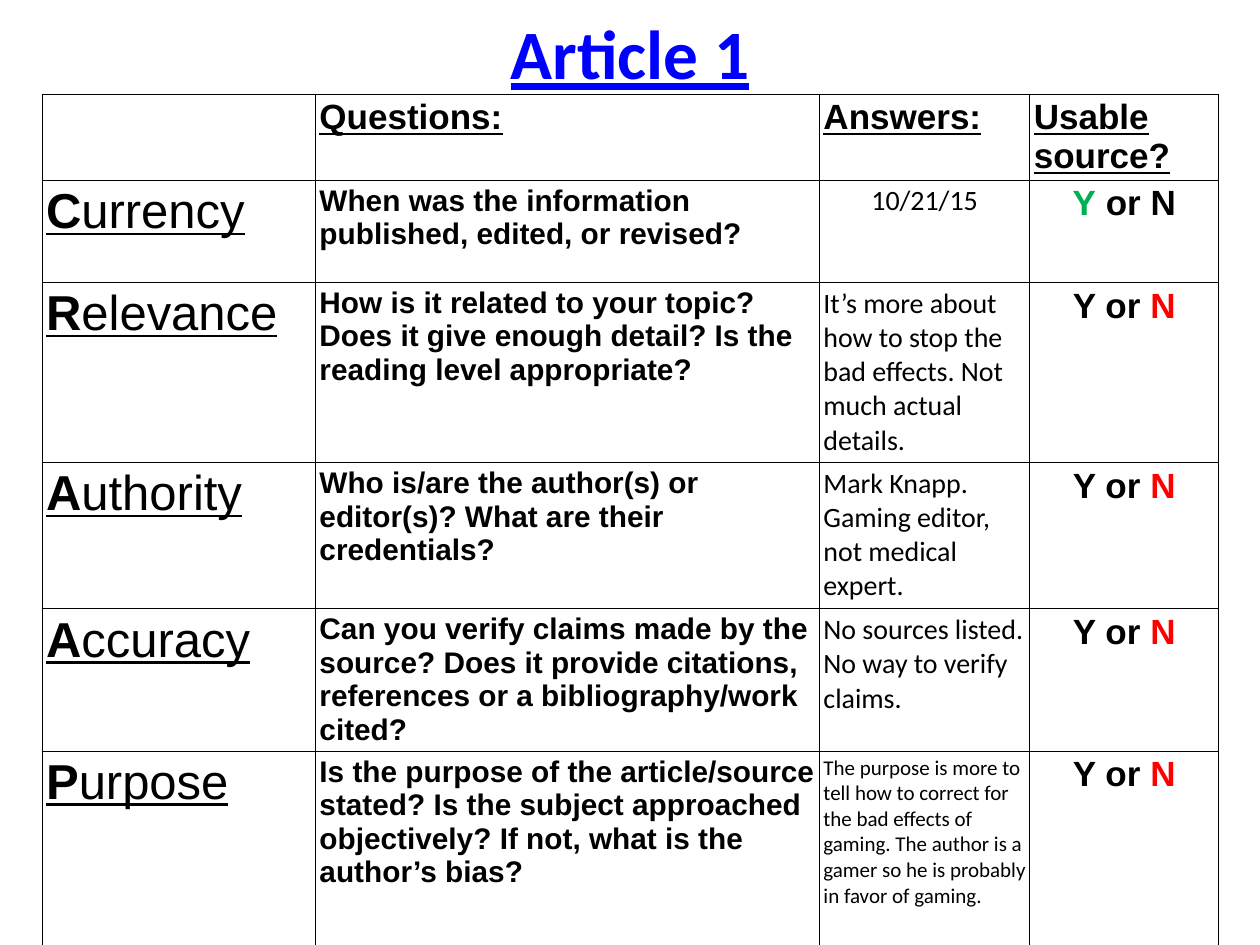
from lxml.etree import SubElement
from pptx import Presentation
from pptx.dml.color import RGBColor
from pptx.enum.text import MSO_ANCHOR, MSO_AUTO_SIZE, PP_ALIGN
from pptx.oxml.ns import qn
from pptx.util import Cm, Pt

COLORS = {"text": "000000", "title": "0000FF", "yes": "00B050", "no": "FF0000"}
COLUMN_WIDTHS = [5.51, 10.16, 4.24, 3.81]
ROW_HEIGHTS = [1.73, 2.06, 3.63, 2.95, 2.87, 5.05]
HEADERS = ["Questions:", "Answers:", "Usable source?"]

# Criterion, question, answer, answer size, answer alignment, usable
CRITERIA = [
    ("Currency", "When was the information published, edited, or revised?",
     "10/21/15", 16, PP_ALIGN.CENTER, True),
    ("Relevance", "How is it related to your topic? Does it give enough detail? "
     "Is the reading level appropriate?",
     "It’s more about how to stop the bad effects. Not much actual details.",
     16, PP_ALIGN.LEFT, False),
    ("Authority", "Who is/are the author(s) or editor(s)? What are their credentials?",
     "Mark Knapp. Gaming editor, not medical expert.", 16, PP_ALIGN.LEFT, False),
    ("Accuracy", "Can you verify claims made by the source? Does it provide citations, "
     "references or a bibliography/work cited?",
     "No sources listed. No way to verify claims.", 16, PP_ALIGN.LEFT, False),
    ("Purpose", "Is the purpose of the article/source stated? Is the subject approached "
     "objectively? If not, what is the author’s bias?",
     "The purpose is more to tell how to correct for the bad effects of gaming. "
     "The author is a gamer so he is probably in favor of gaming.",
     12, PP_ALIGN.LEFT, False),
]


class SlideBuilder:
    """Holds the style and the current slide."""

    heading_font = "Arial"
    body_font = "Calibri"
    cell_margin = Cm(0.08)
    border_width = Pt(0.75)

    def __init__(self, slide):
        self.slide = slide

    def style(self, font, name, size, color="text", bold=False, underline=False):
        font.name = name
        font.size = Pt(size)
        font.bold = bold
        font.underline = underline
        font.color.rgb = RGBColor.from_string(COLORS[color])

    def title(self, text, left, top, width, height):
        shape = self.slide.shapes.title
        shape.left, shape.top = Cm(left), Cm(top)
        shape.width, shape.height = Cm(width), Cm(height)
        frame = shape.text_frame
        frame.text = text
        frame.auto_size = MSO_AUTO_SIZE.NONE
        frame.vertical_anchor = MSO_ANCHOR.MIDDLE
        paragraph = frame.paragraphs[0]
        paragraph.alignment = PP_ALIGN.CENTER
        self.style(paragraph.font, self.body_font, 39.6, "title", True, True)

    def table(self, left, top, widths, heights):
        shape = self.slide.shapes.add_table(
            len(heights), len(widths), Cm(left), Cm(top),
            Cm(sum(widths)), Cm(sum(heights)))
        table = shape.table
        table.first_row = table.horz_banding = False
        for column, width in zip(table.columns, widths):
            column.width = Cm(width)
        for row, height in zip(table.rows, heights):
            row.height = Cm(height)
        for cell in table.iter_cells():
            self.frame_cell(cell)
        return table

    def frame_cell(self, cell):
        cell.margin_left = cell.margin_right = self.cell_margin
        cell.margin_top = cell.margin_bottom = self.cell_margin
        properties = cell._tc.get_or_add_tcPr()
        for side in ("a:lnL", "a:lnR", "a:lnT", "a:lnB"):
            line = SubElement(properties, qn(side), w=str(self.border_width))
            fill = SubElement(line, qn("a:solidFill"))
            SubElement(fill, qn("a:srgbClr"), val=COLORS["text"])
        cell.fill.background()

    def text(self, cell, text, name, size, alignment=PP_ALIGN.LEFT, **look):
        cell.text = text
        paragraph = cell.text_frame.paragraphs[0]
        paragraph.alignment = alignment
        self.style(paragraph.font, name, size, **look)

    def criterion(self, cell, word):
        paragraph = cell.text_frame.paragraphs[0]
        for text, bold in ((word[0], True), (word[1:], False)):
            run = paragraph.add_run()
            run.text = text
            self.style(run.font, self.heading_font, 28, bold=bold, underline=True)

    def verdict(self, cell, usable):
        paragraph = cell.text_frame.paragraphs[0]
        paragraph.alignment = PP_ALIGN.CENTER
        parts = ([("Y", "yes"), (" or N", "text")] if usable
                 else [("Y or ", "text"), ("N", "no")])
        for text, color in parts:
            run = paragraph.add_run()
            run.text = text
            self.style(run.font, self.heading_font, 20, color, bold=True)


def main():
    presentation = Presentation()
    presentation.slide_width, presentation.slide_height = Cm(25.4), Cm(19.05)
    slide = presentation.slides.add_slide(presentation.slide_layouts[5])
    builder = SlideBuilder(slide)

    # Title
    builder.title("Article 1", 1.27, 0.2, 22.86, 1.7)

    # Evaluation table: header row
    table = builder.table(0.85, 1.9, COLUMN_WIDTHS, ROW_HEIGHTS)
    for column, header in enumerate(HEADERS, start=1):
        builder.text(table.cell(0, column), header, builder.heading_font, 20,
                     bold=True, underline=True)

    # Evaluation table: one row per criterion
    for row, entry in enumerate(CRITERIA, start=1):
        word, question, answer, size, alignment, usable = entry
        builder.criterion(table.cell(row, 0), word)
        builder.text(table.cell(row, 1), question, builder.heading_font, 17, bold=True)
        builder.text(table.cell(row, 2), answer, builder.body_font, size, alignment)
        builder.verdict(table.cell(row, 3), usable)

    presentation.save("out.pptx")


if __name__ == "__main__":
    main()
